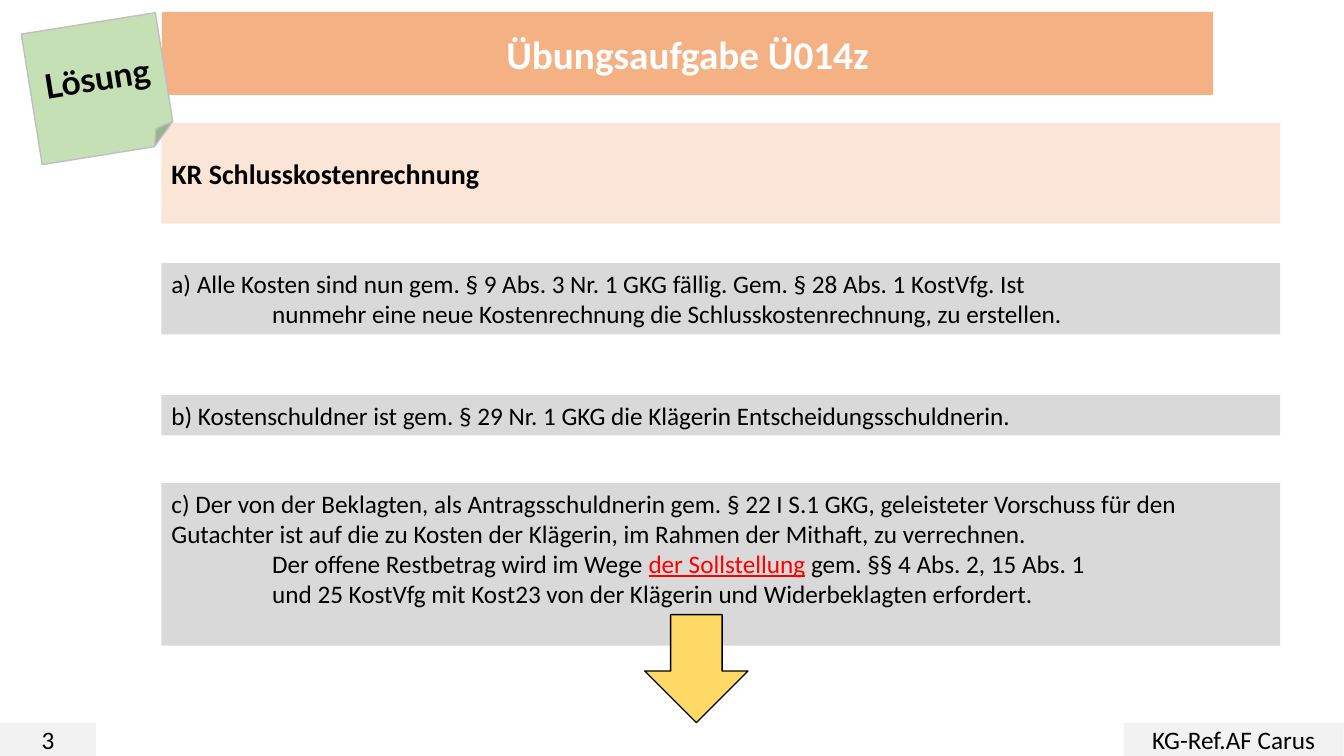
from lxml import etree
from pptx import Presentation
from pptx.dml.color import RGBColor
from pptx.enum.shapes import MSO_SHAPE
from pptx.enum.text import MSO_ANCHOR, MSO_AUTO_SIZE, PP_ALIGN
from pptx.oxml.ns import qn
from pptx.util import Cm, Pt

RECTANGLE = MSO_SHAPE.RECTANGLE
FOLDED_CORNER = MSO_SHAPE.FOLDED_CORNER
DOWN_ARROW = MSO_SHAPE.DOWN_ARROW
LEFT, CENTER = PP_ALIGN.LEFT, PP_ALIGN.CENTER
TOP, MIDDLE = MSO_ANCHOR.TOP, MSO_ANCHOR.MIDDLE
NO_AUTOFIT = MSO_AUTO_SIZE.NONE
TITLE_ONLY = 5

BLACK, WHITE, RED = "000000", "FFFFFF", "FF0000"
ORANGE, PEACH, GREEN, YELLOW = "F4B183", "FBE5D6", "C5E0B4", "FFD966"
ANSWER_GREY, FOOTER_GREY, NOTE_EDGE = "D9D9D9", "F2F2F2", "BFBFBF"

CONTENT_LEFT, CONTENT_WIDTH = 4.07, 28.19
FOOTER_TOP, FOOTER_HEIGHT = 18.21, 0.84
INDENT = Cm(2.54)
KEY_TERM = "der Sollstellung"

ANSWERS = [
    (6.63, 1.8, MIDDLE,
     "a) Alle Kosten sind nun gem. § 9 Abs. 3 Nr. 1 GKG fällig. Gem. § 28 Abs. 1 KostVfg. Ist",
     ["nunmehr eine neue Kostenrechnung die Schlusskostenrechnung, zu erstellen."]),
    (9.95, 1.02, MIDDLE,
     "b) Kostenschuldner ist gem. § 29 Nr. 1 GKG die Klägerin Entscheidungsschuldnerin.",
     []),
    (12.17, 4.1, TOP,
     "c) Der von der Beklagten, als Antragsschuldnerin gem. § 22 I S.1 GKG, geleisteter "
     "Vorschuss für den \tGutachter ist auf die zu Kosten der Klägerin, im Rahmen der "
     "Mithaft, zu verrechnen.",
     ["Der offene Restbetrag wird im Wege der Sollstellung gem. §§ 4 Abs. 2, 15 Abs. 1",
      "und 25 KostVfg mit Kost23 von der Klägerin und Widerbeklagten erfordert."]),
]


def rgb(value):
    """Turn a hex string into a colour."""
    return RGBColor.from_string(value)


def place(box, left, top, width, height):
    """Position a shape with lengths in centimetres."""
    box.left, box.top, box.width, box.height = map(Cm, (left, top, width, height))


def paint(box, fill, edge=None):
    """Give a shape a solid fill and an optional thin outline."""
    box.fill.solid()
    box.fill.fore_color.rgb = rgb(fill)
    if edge:
        box.line.color.rgb = rgb(edge)
        box.line.width = Pt(1)
    else:
        box.line.fill.background()


def add_box(page, kind, area, fill, edge=None):
    """Add a flat preset shape."""
    box = page.shapes.add_shape(kind, *map(Cm, area))
    box.shadow.inherit = False
    paint(box, fill, edge)
    return box


def style(para, size, color=BLACK, bold=False, align=LEFT, font="Calibri"):
    """Set the alignment and font of a paragraph."""
    para.alignment = align
    para.font.name = font
    para.font.size = Pt(size)
    para.font.bold = bold
    para.font.color.rgb = rgb(color)


def add_label(page, kind, area, fill, text, size, edge=None, **look):
    """Add a shape holding a single styled line."""
    box = add_box(page, kind, area, fill, edge)
    box.text_frame.text = text
    style(box.text_frame.paragraphs[0], size, **look)
    return box


def add_detail(frame, text):
    """Add an indented paragraph with the key term in underlined red."""
    para = frame.add_paragraph()
    style(para, 18)
    para._p.get_or_add_pPr().set("marL", str(INDENT))
    before, term, after = text.partition(KEY_TERM)
    para.add_run().text = before
    if term:
        span = para.add_run()
        span.text = term
        span.font.underline = True
        span.font.color.rgb = rgb(RED)
        para.add_run().text = after


def add_answer(page, top, height, anchor, statement, details):
    """Add a grey answer box with its indented continuation lines."""
    area = (CONTENT_LEFT, top, CONTENT_WIDTH, height)
    box = add_label(page, RECTANGLE, area, ANSWER_GREY, statement, 18)
    box.text_frame.vertical_anchor = anchor
    for detail in details:
        add_detail(box.text_frame, detail)


def set_title(page, text):
    """Turn the title placeholder into a rounded banner."""
    title = page.shapes.title
    place(title, 4.08, 0.3, 26.49, 2.09)
    outline = etree.SubElement(title._element.spPr, qn("a:prstGeom"), prst="roundRect")
    etree.SubElement(outline, qn("a:avLst"))
    paint(title, ORANGE)
    title.text_frame.text = text
    title.text_frame.auto_size = NO_AUTOFIT
    title.text_frame.vertical_anchor = MIDDLE
    style(title.text_frame.paragraphs[0], 28, WHITE, True, CENTER)


def main():
    """Build the solution slide and save it."""
    deck = Presentation()
    deck.slide_width, deck.slide_height = Cm(33.87), Cm(19.05)
    page = deck.slides.add_slide(deck.slide_layouts[TITLE_ONLY])
    set_title(page, "Übungsaufgabe Ü014z")
    add_label(page, RECTANGLE, (CONTENT_LEFT, 3.1, CONTENT_WIDTH, 2.54), PEACH,
              "KR Schlusskostenrechnung", 20, bold=True)
    for left, width, text in ((0, 2.42, "3"), (28.32, 5.54, "KG-Ref.AF Carus")):
        add_label(page, RECTANGLE, (left, FOOTER_TOP, width, FOOTER_HEIGHT),
                  FOOTER_GREY, text, 18, align=CENTER)
    for answer in ANSWERS:
        add_answer(page, *answer)
    note = add_label(page, FOLDED_CORNER, (0.78, 0.57, 3.42, 3.33), GREEN, "Lösung", 24,
                     edge=NOTE_EDGE, bold=True, align=CENTER, font="Lato")
    note.rotation = 350.9
    add_box(page, DOWN_ARROW, (16.25, 15.49, 2.6, 2.72), YELLOW, BLACK)
    deck.save("out.pptx")


if __name__ == "__main__":
    main()
